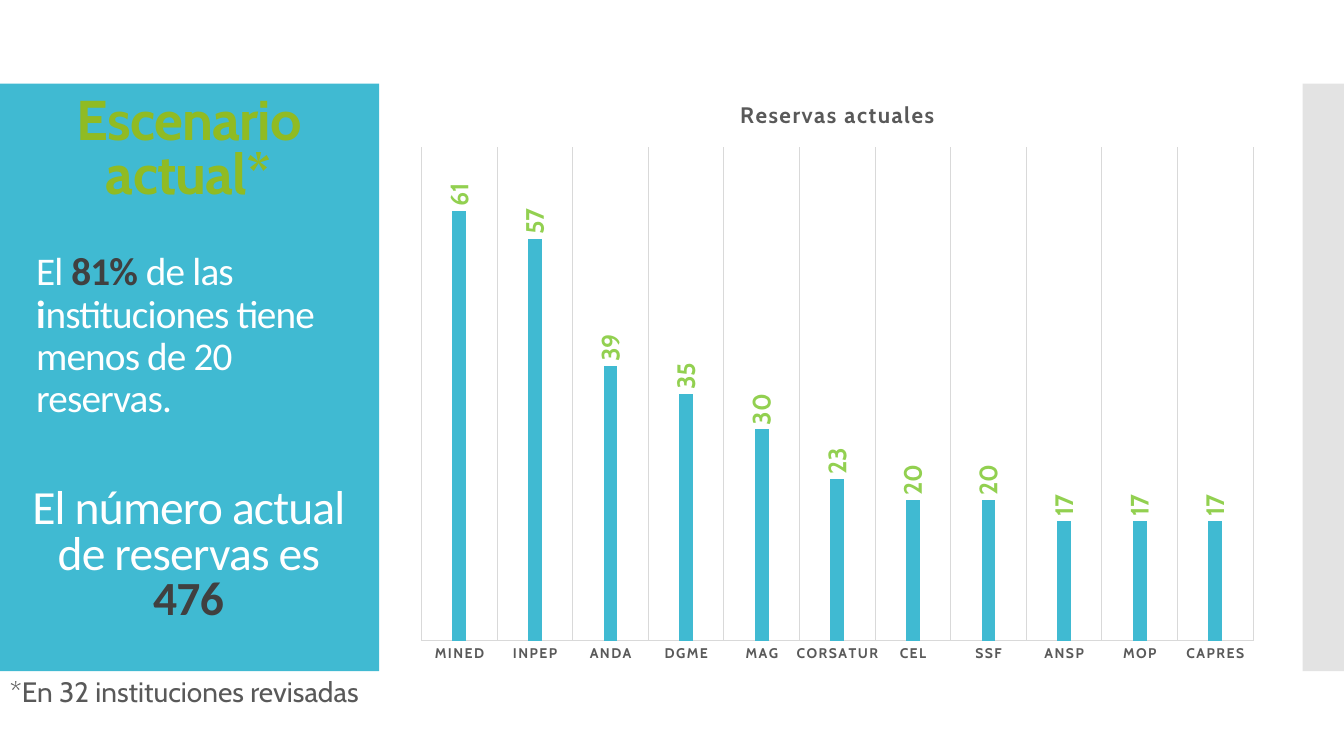
from lxml.etree import SubElement
from pptx import Presentation
from pptx.chart.data import CategoryChartData
from pptx.dml.color import RGBColor
from pptx.enum.chart import XL_CHART_TYPE, XL_LABEL_POSITION, XL_TICK_LABEL_POSITION, XL_TICK_MARK
from pptx.enum.shapes import MSO_SHAPE
from pptx.enum.text import MSO_ANCHOR, PP_ALIGN
from pptx.oxml.ns import qn
from pptx.util import Inches, Pt

BLUE = RGBColor(0x40, 0xBA, 0xD2)
SILVER = RGBColor(0xC8, 0xC8, 0xC8)
OLIVE = RGBColor(0x90, 0xBB, 0x23)
LIME = RGBColor(0x92, 0xD0, 0x50)
WHITE = RGBColor(0xFF, 0xFF, 0xFF)
DARK = RGBColor(0x40, 0x40, 0x40)
GRAY = RGBColor(0x59, 0x59, 0x59)
RULE = RGBColor(0xD9, 0xD9, 0xD9)

RESERVES = {
    "MINED": 61, "INPEP": 57, "ANDA": 39, "DGME": 35, "MAG": 30, "CORSATUR": 23,
    "CEL": 20, "SSF": 20, "ANSP": 17, "MOP": 17, "CAPRES": 17,
}


class ReservesSlide:
    heading_font = "Cabin"
    body_font = "Calibri"

    def __init__(self, page):
        self.page = page

    def style(self, font, name, size, color, bold=False):
        font.name = name
        font.size = Pt(size)
        font.color.rgb = color
        font.bold = bold

    def panel(self, left, top, width, height, color, opacity=100):
        box = self.page.shapes.add_shape(
            MSO_SHAPE.RECTANGLE, Inches(left), Inches(top), Inches(width), Inches(height))
        box.shadow.inherit = False
        box.fill.solid()
        box.fill.fore_color.rgb = color
        box.line.fill.background()
        if opacity < 100:
            fill_color = next(box.element.spPr.iter(qn("a:srgbClr")))
            SubElement(fill_color, qn("a:alpha")).set("val", str(opacity * 1000))

    def text(self, left, top, width, height, spans, size, font, align=PP_ALIGN.LEFT,
             line_spacing=0.9, anchor=MSO_ANCHOR.MIDDLE, tracking=-60, space_before=0):
        """Add one paragraph; spans are (text, color, bold), tracking is in 1/100 pt."""
        box = self.page.shapes.add_textbox(
            Inches(left), Inches(top), Inches(width), Inches(height))
        frame = box.text_frame
        frame.word_wrap = True
        frame.vertical_anchor = anchor
        para = frame.paragraphs[0]
        para.alignment = align
        para.line_spacing = line_spacing
        para.space_before = Pt(space_before)
        for words, color, bold in spans:
            span = para.add_run()
            span.text = words
            self.style(span.font, font, size, color, bold)
        for properties in box.element.iter(qn("a:rPr")):
            properties.set("spc", str(tracking))

    def column_chart(self, left, top, width, height, title, values):
        data = CategoryChartData()
        data.categories = list(values)
        data.add_series(title, list(values.values()))
        chart = self.page.shapes.add_chart(
            XL_CHART_TYPE.COLUMN_CLUSTERED, Inches(left), Inches(top),
            Inches(width), Inches(height), data).chart
        chart.has_legend = False
        chart.font.name = self.heading_font
        chart.font.size = Pt(10)

        chart.has_title = True
        chart.chart_title.include_in_layout = False
        heading = chart.chart_title.text_frame
        heading.text = title
        self.style(heading.paragraphs[0].runs[0].font, self.heading_font, 16, GRAY, True)

        plot = chart.plots[0]
        plot.gap_width = 444
        plot.overlap = -90
        plot.vary_by_categories = False
        series = plot.series[0]
        series.format.fill.solid()
        series.format.fill.fore_color.rgb = BLUE
        labels = series.data_labels
        labels.show_value = True
        labels.position = XL_LABEL_POSITION.OUTSIDE_END
        self.style(labels.font, self.heading_font, 18, LIME, True)

        self.category_axis(chart.category_axis)
        value_axis = chart.value_axis
        value_axis.visible = False
        value_axis.has_major_gridlines = False
        value_axis.minimum_scale = 0
        value_axis.maximum_scale = 70
        self.finish_chart(chart.element)

    def category_axis(self, axis):
        axis.major_tick_mark = XL_TICK_MARK.NONE
        axis.minor_tick_mark = XL_TICK_MARK.NONE
        axis.tick_label_position = XL_TICK_LABEL_POSITION.NEXT_TO_AXIS
        self.style(axis.tick_labels.font, self.heading_font, 10, GRAY, True)
        axis.has_major_gridlines = True
        for line in (axis.format.line, axis.major_gridlines.format.line):
            line.color.rgb = RULE
            line.width = Pt(0.75)

    def finish_chart(self, root):
        """Turn the value labels upright and space the letters of title and axis."""
        for body in root.xpath(".//c:ser/c:dLbls//a:bodyPr"):
            body.set("rot", "-5400000")
            body.set("vert", "horz")
        for properties in root.xpath(".//c:title//a:rPr | .//c:catAx//a:defRPr"):
            properties.set("spc", "120")


def main():
    deck = Presentation()
    deck.slide_width = Inches(13.33)
    deck.slide_height = Inches(7.5)
    slide = ReservesSlide(deck.slides.add_slide(deck.slide_layouts[6]))

    slide.panel(0, 0.83, 3.76, 5.83, BLUE)
    slide.panel(12.92, 0.83, 0.41, 5.83, SILVER, opacity=50)
    slide.text(0, 0.94, 3.74, 1.12, [("Escenario actual*", OLIVE, True)],
               40, slide.heading_font, PP_ALIGN.CENTER, 0.8)
    slide.text(0.13, 4.96, 3.48, 1.12,
               [("El número actual de reservas es ", WHITE, False), ("476", DARK, True)],
               34, slide.body_font, PP_ALIGN.CENTER, 0.8)
    slide.text(0.26, 2.78, 3.22, 1.12,
               [("El ", WHITE, False), ("81% ", DARK, True), ("de las", WHITE, False),
                (" i", WHITE, True),
                ("nstituciones tiene menos de 20 reservas.", WHITE, False)],
               28, slide.body_font)
    slide.text(0, 6.68, 4.12, 0.38, [("*En 32 instituciones revisadas", GRAY, False)],
               20, slide.heading_font, anchor=MSO_ANCHOR.TOP, tracking=0, space_before=12)
    slide.column_chart(4.01, 0.78, 8.59, 5.9, "Reservas actuales", RESERVES)
    deck.save("out.pptx")


if __name__ == "__main__":
    main()
